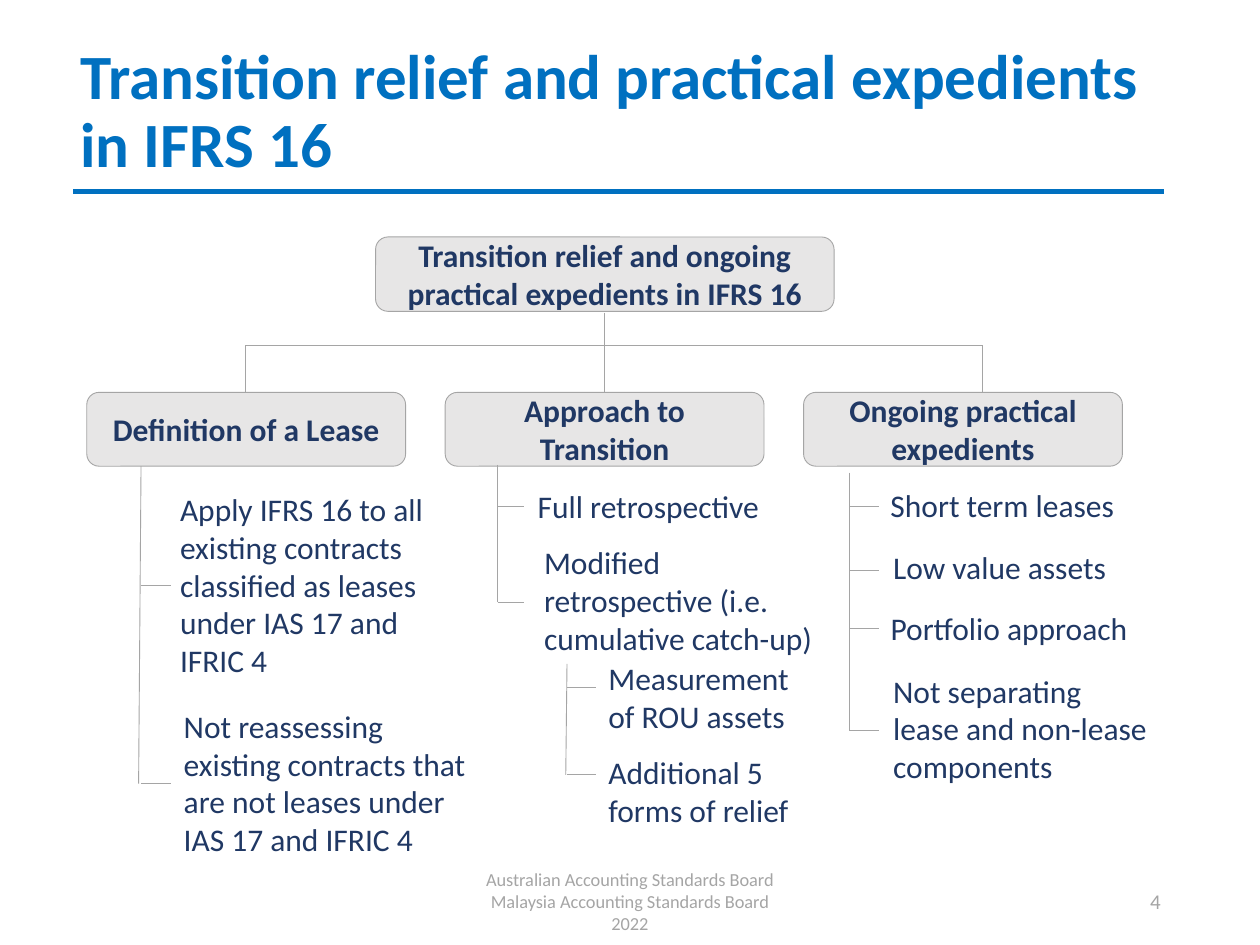
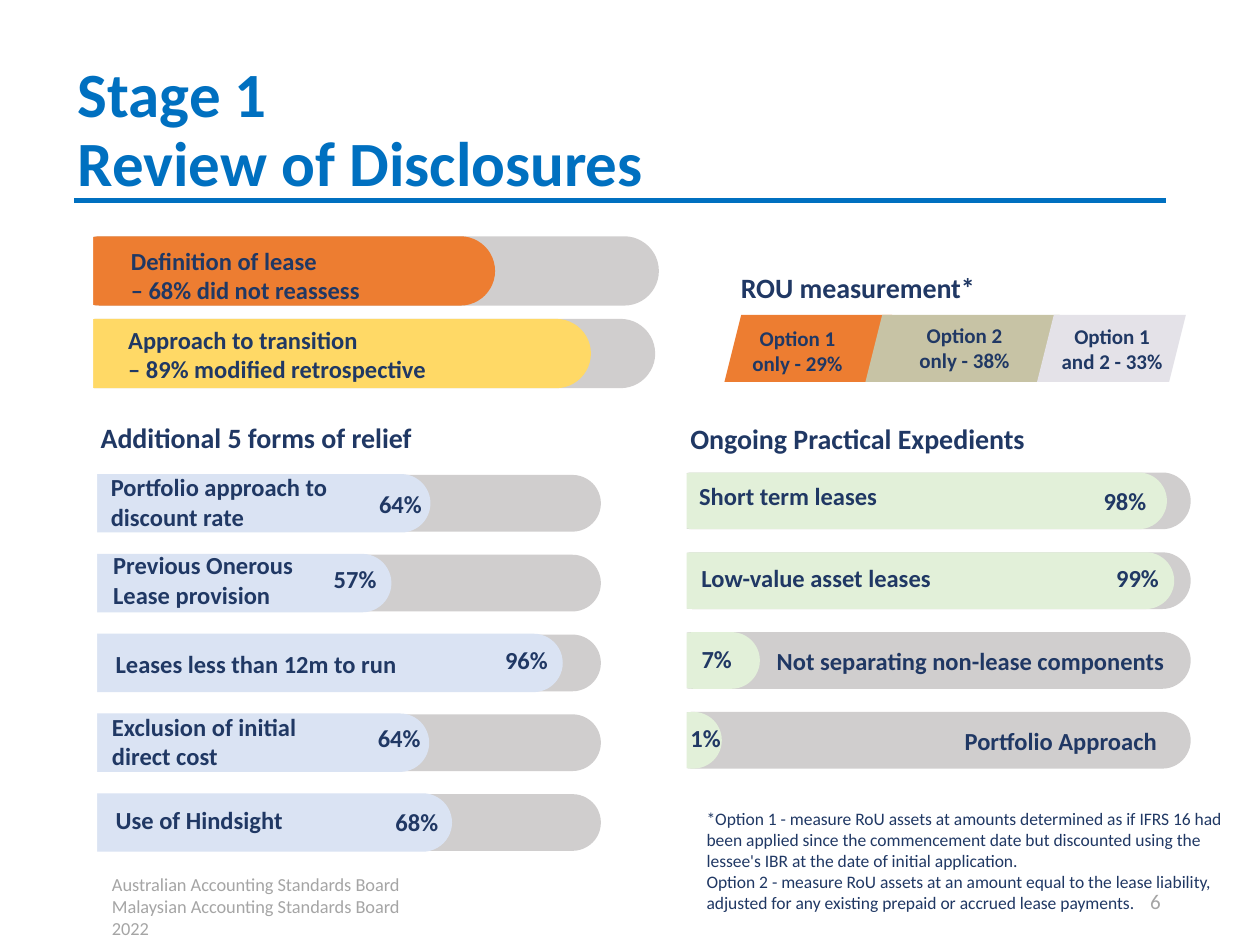
from lxml import etree
from pptx import Presentation
from pptx.dml.color import RGBColor
from pptx.enum.shapes import MSO_CONNECTOR, MSO_SHAPE
from pptx.enum.text import MSO_ANCHOR, MSO_AUTO_SIZE, PP_ALIGN
from pptx.oxml.ns import qn
from pptx.util import Pt

ROUNDED = MSO_SHAPE.ROUNDED_RECTANGLE
RECTANGLE = MSO_SHAPE.RECTANGLE
PARALLELOGRAM = MSO_SHAPE.PARALLELOGRAM
STRAIGHT = MSO_CONNECTOR.STRAIGHT
TOP, MIDDLE = MSO_ANCHOR.TOP, MSO_ANCHOR.MIDDLE
LEFT, CENTER, RIGHT = PP_ALIGN.LEFT, PP_ALIGN.CENTER, PP_ALIGN.RIGHT
GROW = MSO_AUTO_SIZE.SHAPE_TO_FIT_TEXT

FONT = "Calibri"
BLUE = "0070C0"
NAVY = "203864"
GREY = "A5A5A5"
BOX_GREY = "E7E6E6"
TRACK_GREY = "D0CECE"
WHITE = "FFFFFF"
ORANGE = "ED7D31"
YELLOW = "FFD966"
SAND = "C7C3A5"
LILAC = "E4E2E8"
PALE_BLUE = "DAE3F3"
PALE_GREEN = "E2F0D9"
BAR_PITCH = 45.6
BAR_HEIGHT = 32.4


def color(value):
    return RGBColor.from_string(value)


class Deck:
    def __init__(self):
        self.presentation = Presentation()
        self.presentation.slide_width = Pt(720)
        self.presentation.slide_height = Pt(540)
        self.slide = None

    def new_slide(self):
        layout = self.presentation.slide_layouts[6]
        self.slide = self.presentation.slides.add_slide(layout)

    def fill_text(self, shape, text, size, ink=NAVY, bold=False, align=LEFT, anchor=TOP,
                  spacing=None):
        frame = shape.text_frame
        frame.word_wrap = True
        frame.vertical_anchor = anchor
        for index, line in enumerate(text.split("\n")):
            paragraph = frame.add_paragraph() if index else frame.paragraphs[0]
            paragraph.text = line
            paragraph.alignment = align
            paragraph.line_spacing = spacing
            paragraph.font.name = FONT
            paragraph.font.size = Pt(size)
            paragraph.font.bold = bold
            paragraph.font.color.rgb = color(ink)

    def text(self, left, top, width, height, text, size, **style):
        shape = self.slide.shapes.add_textbox(Pt(left), Pt(top), Pt(width), Pt(height))
        self.fill_text(shape, text, size, **style)
        if style.get("anchor", TOP) == TOP:
            shape.text_frame.auto_size = GROW

    def shape(self, kind, left, top, width, height, fill, line=None, weight=1.0):
        shape = self.slide.shapes.add_shape(kind, Pt(left), Pt(top), Pt(width), Pt(height))
        shape.shadow.inherit = False
        shape.fill.solid()
        shape.fill.fore_color.rgb = color(fill)
        if line:
            shape.line.color.rgb = color(line)
            shape.line.width = Pt(weight)
        else:
            shape.line.fill.background()
        return shape

    def box(self, left, top, width, height, text):
        shape = self.shape(ROUNDED, left, top, width, height, BOX_GREY, GREY, 0.5)
        self.fill_text(shape, text, 18, bold=True, align=CENTER, anchor=MIDDLE)

    def bar(self, left, top, width, fill, height=BAR_HEIGHT, line=None):
        self.shape(ROUNDED, left, top, width, height, fill, line).adjustments[0] = 0.5

    def line(self, x1, y1, x2, y2, ink=GREY, weight=0.5):
        connector = self.slide.shapes.add_connector(STRAIGHT, Pt(x1), Pt(y1), Pt(x2), Pt(y2))
        connector.line.color.rgb = color(ink)
        connector.line.width = Pt(weight)
        etree.SubElement(connector.element.spPr, qn("a:effectLst"))

    def tree(self, x, top, foot_x, branch_end, branches):
        self.line(x, top, foot_x, branches[-1])
        for y in branches:
            self.line(x, y, branch_end, y)

    def title(self, left, top, width, height, text, rule_left, rule_top):
        self.text(left, top, width, height, text, 36, ink=BLUE, bold=True,
                  anchor=MIDDLE, spacing=0.9)
        self.line(rule_left, rule_top, rule_left + 623.5, rule_top, BLUE, 3)

    def footer(self, left, top, text, align, number):
        self.text(left, top, 243.4, 28.8, text, 10.5, ink=GREY, align=align, anchor=MIDDLE)
        self.text(508.3, 500.4, 162, 28.8, number, 12, ink=GREY, align=RIGHT, anchor=MIDDLE)


def build_transition_relief(deck):
    deck.new_slide()
    deck.title(38.9, 31, 623.5, 67.7,
               "Transition relief and practical expedients in IFRS 16", 41.8, 109.4)
    deck.footer(238.3, 500.4, "Australian Accounting Standards Board\n"
                "Malaysia Accounting Standards Board\n2022", CENTER, "4")

    deck.box(214.6, 135.4, 262, 42.5,
             "Transition relief and ongoing practical expedients in IFRS 16")
    branches = ["Definition of a Lease", "Approach to Transition", "Ongoing practical expedients"]
    for index, branch in enumerate(branches):
        deck.box(49.6 + 204.8 * index, 224.2, 182.2, 42.2, branch)
    deck.line(345.6, 178.6, 345.6, 224)
    deck.line(140.4, 197.3, 561.6, 197.3)
    for x in (140.4, 561.6):
        deck.line(x, 197.3, x, 224)

    deck.tree(80.6, 266.4, 79.2, 97.9, [334.8, 447.8])
    deck.tree(284.4, 265.7, 284.4, 299.5, [289.4, 344.2])
    deck.tree(324, 379.4, 323.3, 340.6, [393.1, 442.8])
    deck.tree(485.3, 270, 485.3, 502.2, [289.4, 326.2, 359.3, 417.6])

    leaves = [
        (95.8, 276.5, 168.5, 116.6, "Apply IFRS 16 to all existing contracts classified as leases "
                                    "under IAS 17 and IFRIC 4"),
        (97.9, 400.3, 179.3, 94.3, "Not reassessing existing contracts that are not leases under "
                                   "IAS 17 and IFRIC 4"),
        (300.2, 275, 154.8, 28.8, "Full retrospective"),
        (303.8, 306.7, 176.4, 72.7, "Modified retrospective (i.e. cumulative catch-up)"),
        (340.6, 373, 119.5, 51.1, "Measurement of ROU assets"),
        (340.6, 427, 127.4, 51.1, "Additional 5 forms of relief"),
        (501.8, 274.3, 161.3, 28.8, "Short term leases"),
        (503.3, 309.6, 138.2, 28.8, "Low value assets"),
        (501.8, 344.2, 171.4, 28.8, "Portfolio approach"),
        (503.3, 380.2, 162, 72.7, "Not separating lease and non-lease components"),
    ]
    for leaf in leaves:
        deck.text(*leaf, 18)


def build_review_of_disclosures(deck):
    deck.new_slide()

    headlines = [
        (37.4, 135, 245.5, ORANGE, 67.7, 136.8, "Definition of lease\n– 68% did not reassess"),
        (35.3, 182.2, 302.4, YELLOW, 66.2, 182.2,
         "Approach to transition\n– 89% modified retrospective"),
    ]
    for left, top, width, fill, text_left, text_top, text in headlines:
        deck.bar(left, top, 339.1, TRACK_GREY, 39.6)
        deck.bar(left, top, width, fill, 39.6)
        deck.text(text_left, text_top, 252, 41, text, 14, bold=True)
    deck.shape(RECTANGLE, 0, 126, 53.3, 115.9, WHITE)

    options = [
        (414, 95.8, ORANGE, 421.2, 182.2, 69.1, "Option 1 only - 29%"),
        (494.6, 110.9, SAND, 511.9, 180.7, 78.5, "Option 2 only - 38%"),
        (592.6, 85, LILAC, 596.2, 181.4, 78.5, "Option 1 and 2 - 33%"),
    ]
    for left, width, fill, text_left, text_top, text_width, text in options:
        deck.shape(PARALLELOGRAM, left, 180, width, 38.2, fill)
        deck.text(text_left, text_top, text_width, 36, text, 12, bold=True, align=CENTER)

    headings = [
        (416.2, 151.2, 178.6, "ROU measurement*"),
        (50.4, 236.9, 193.7, "Additional 5 forms of relief"),
        (387.4, 237.6, 269.3, "Ongoing Practical Expedients"),
    ]
    for left, top, width, text in headings:
        deck.text(left, top, width, 26.6, text, 16, bold=True)

    relief_forms = [
        (32.4, 213.1, 56.2, -5, 144.7, "Portfolio approach to discount rate", LEFT,
         209.5, 4.4, "64%"),
        (33.8, 189.4, 57.6, -6, 118.1, "Previous Onerous Lease provision", LEFT,
         183.6, 2, "57%"),
        (28.8, 292.3, 59, 4.6, 186.5, "Leases less than 12m to run", LEFT, 281.5, 2.4, "96%"),
        (31.7, 213.1, 56.9, -5, 152.6, "Exclusion of initial direct cost", LEFT,
         208.8, 1.5, "64%"),
        (28.8, 229, 59, 2.7, 136.1, "Use of Hindsight", LEFT, 218.9, 4.1, "68%"),
    ]
    expedients = [
        (380.2, 286.6, 392.4, 1.4, 131, "Short term leases", LEFT, 623.5, 4.3, "98%"),
        (379.4, 291.6, 393.8, 2.6, 175, "Low-value asset leases", LEFT, 630.7, 2.6, "99%"),
        (380.2, 54, 434.9, 4.6, 237.6, "Not separating non-lease components", RIGHT,
         393.8, 3.1, "7%"),
        (379.4, 33.1, 459.4, 4.3, 208.8, "Portfolio Approach", RIGHT, 387.4, 2.9, "1%"),
    ]
    panels = [
        (relief_forms, 33.8, 271.4, 309.6, PALE_BLUE, PALE_BLUE, (16.6, 257.8, 38.9, 241.2)),
        (expedients, 379.4, 270, 301, PALE_GREEN, None, (354.2, 254.2, 38.2, 203)),
    ]
    for rows, track_left, first_top, track_width, fill, outline, cover in panels:
        for index, (left, width, *_) in enumerate(rows):
            top = first_top + BAR_PITCH * index
            deck.bar(track_left, top, track_width, TRACK_GREY)
            deck.bar(left, top, width, fill, line=outline)
        deck.shape(RECTANGLE, *cover, WHITE)
        for index, row in enumerate(rows):
            top = first_top + BAR_PITCH * index
            label_left, label_drop, label_width, label, align, value_left, value_drop, value = row[2:]
            deck.text(label_left, top + label_drop, label_width, 24.5, label, 14,
                      bold=True, align=align)
            deck.text(value_left, top + value_drop, 41.8, 24.5, value, 14, bold=True)

    deck.title(37.4, 23, 642.2, 104.4, "Stage 1\vReview of Disclosures", 42.5, 114.5)
    deck.text(396.7, 457.9, 326.9, 67.7,
              "*Option 1 - measure RoU assets at amounts determined as if IFRS 16 had been applied "
              "since the commencement date but discounted using the lessee's IBR at the date of "
              "initial application.\nOption 2 - measure RoU assets at an amount equal to the lease "
              "liability, adjusted for any existing prepaid or accrued lease payments.", 10)
    deck.footer(56.9, 503.3, "Australian Accounting Standards Board\n"
                "Malaysian Accounting Standards Board\n2022", LEFT, "6")


def main():
    deck = Deck()
    build_transition_relief(deck)
    build_review_of_disclosures(deck)
    deck.presentation.save("out.pptx")


if __name__ == "__main__":
    main()
